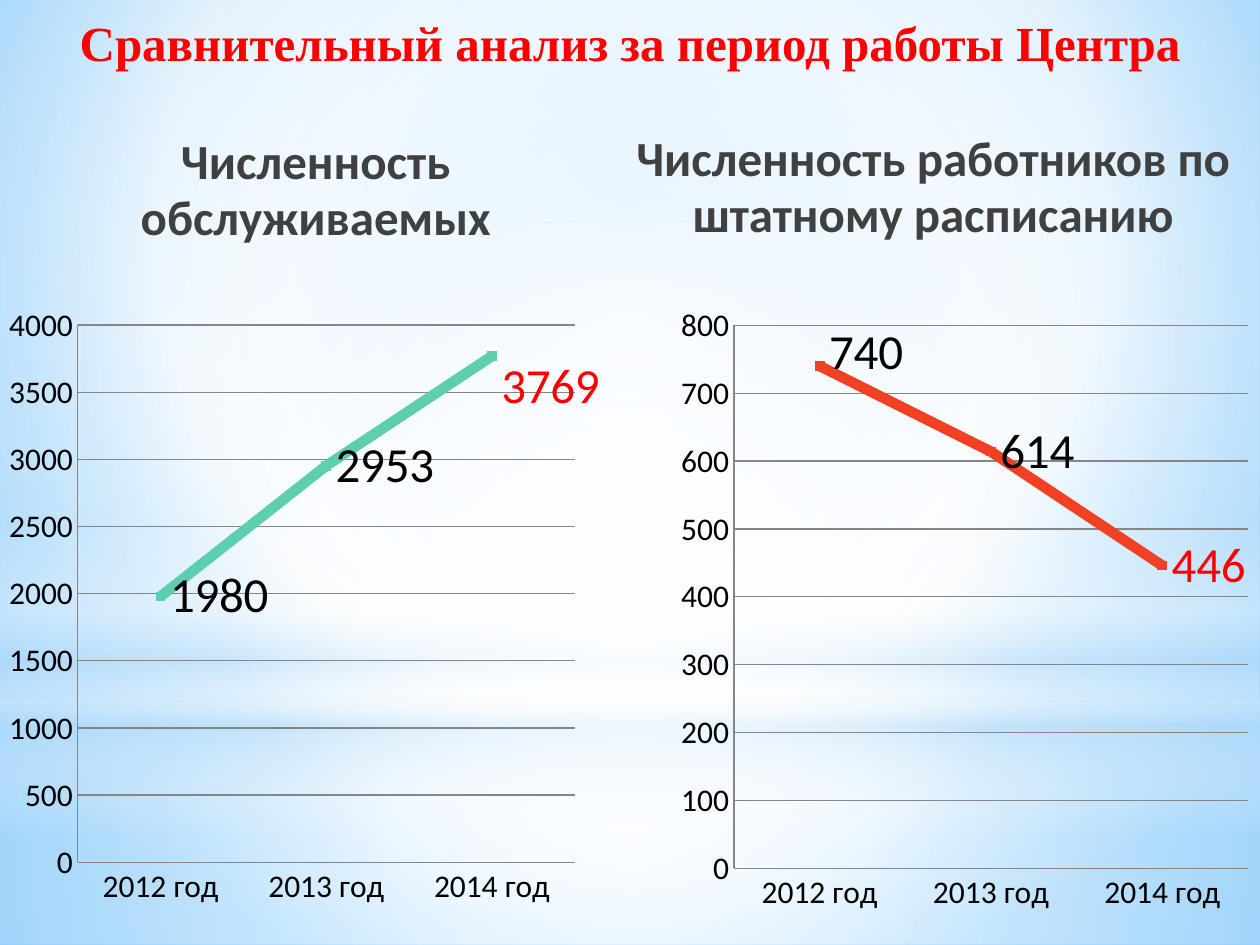
from dataclasses import dataclass
from lxml.etree import SubElement
from pptx import Presentation
from pptx.chart.data import CategoryChartData
from pptx.dml.color import RGBColor
from pptx.enum.chart import (XL_CHART_TYPE as ChartType, XL_LABEL_POSITION as LabelPos,
                             XL_MARKER_STYLE as Marker, XL_TICK_MARK as Tick)
from pptx.enum.shapes import MSO_SHAPE as Shape
from pptx.enum.text import MSO_ANCHOR as Anchor, PP_ALIGN as Align
from pptx.oxml import parse_xml
from pptx.oxml.ns import nsdecls, qn
from pptx.util import Inches, Pt

WIDTH, HEIGHT = 10, 7.5
COLORS = {"red": "FF0000", "heading": "404040", "black": "000000", "grid": "868686",
          "clients": "5DCEAF", "staff": "F14124", "white": "FFFFFF",
          "sky": "B4DCFA", "sky_mid": "9ED5FF", "sky_deep": "5BB9FF"}
YEARS = ["2012 год", "2013 год", "2014 год"]
CENTER = (50, 50, 50, 50)


def rgb(name):
    return RGBColor.from_string(COLORS[name])


def set_gradient(fill, parent, stops, focus=None):
    """Stops are (position, colour, opacity) in percent; without a focus the run is vertical."""
    fill.gradient()
    old = parent.find(qn("a:gradFill"))
    stop_xml = "".join(
        f'<a:gs pos="{pos * 1000}"><a:srgbClr val="{COLORS[color]}">'
        f'<a:alpha val="{opacity * 1000}"/></a:srgbClr></a:gs>'
        for pos, color, opacity in stops)
    if focus:
        sides = " ".join(f'{side}="{share * 1000}"' for side, share in zip("ltrb", focus))
        course = f'<a:path path="circle"><a:fillToRect {sides}/></a:path>'
    else:
        course = '<a:lin ang="5400000" scaled="0"/>'
    parent.replace(old, parse_xml(
        f'<a:gradFill {nsdecls("a")} rotWithShape="1"><a:gsLst>{stop_xml}</a:gsLst>'
        f'{course}</a:gradFill>'))


def add_layout(parent, index, **values):
    """Insert a manual chart layout as the child at index."""
    layout = SubElement(parent, qn("c:layout"))
    manual = SubElement(layout, qn("c:manualLayout"))
    for tag, value in values.items():
        SubElement(manual, qn(f"c:{tag}")).set("val", str(value))
    parent.insert(index, layout)


@dataclass
class SlideBuilder:
    slide: object
    body_font: str = "Calibri"
    title_font: str = "Times New Roman"
    heading_size: int = 28
    axis_size: int = 18

    def box(self, left, top, width, height):
        """Turn shares of the slide into lengths."""
        return (Inches(left * WIDTH), Inches(top * HEIGHT),
                Inches(width * WIDTH), Inches(height * HEIGHT))

    def background(self, stops, focus):
        fill = self.slide.background.fill
        fill.solid()
        bg_properties = self.slide.element.find(".//" + qn("p:bgPr"))
        set_gradient(fill, bg_properties, stops, focus)

    def glow(self, kind, area, stops, focus=None):
        glow = self.slide.shapes.add_shape(kind, *self.box(*area))
        glow.shadow.inherit = False
        glow.line.fill.background()
        set_gradient(glow.fill, glow.element.spPr, stops, focus)

    def text(self, words, area, color, font, anchor, top_margin=0.05):
        frame = self.slide.shapes.add_textbox(*self.box(*area)).text_frame
        frame.word_wrap = True
        frame.vertical_anchor = anchor
        frame.margin_top = Inches(top_margin)
        paragraph = frame.paragraphs[0]
        paragraph.text = words
        paragraph.alignment = Align.CENTER
        paragraph.font.name = font
        paragraph.font.size = Pt(self.heading_size)
        paragraph.font.bold = True
        paragraph.font.color.rgb = rgb(color)
        return paragraph

    def heading(self, words, area):
        paragraph = self.text(words, area, "heading", self.body_font, Anchor.BOTTOM)
        paragraph.space_after = Pt(3)
        paragraph.line_spacing = 0.96

    def label_font(self, font, color):
        font.name = self.body_font
        font.size = Pt(self.heading_size)
        font.color.rgb = rgb(color)

    def line_chart(self, area, values, color, top_value, step, plot, shifts):
        """Plot is (x, y, w, h) in shares of the chart; shifts move labels down by point."""
        data = CategoryChartData()
        data.categories = YEARS
        data.add_series("Series 1", values)
        chart = self.slide.shapes.add_chart(
            ChartType.LINE_MARKERS, *self.box(*area), data).chart
        chart.has_legend = chart.has_title = False
        chart.font.name = self.body_font
        chart.font.size = Pt(self.axis_size)
        chart.font.color.rgb = rgb("black")
        plot_area = chart.plots[0]
        plot_area.vary_by_categories = False

        for axis in (chart.category_axis, chart.value_axis):
            axis.major_tick_mark = axis.minor_tick_mark = Tick.NONE
            axis.format.line.color.rgb = rgb("grid")
            axis.format.line.width = Pt(0.75)
        value_axis = chart.value_axis
        value_axis.minimum_scale, value_axis.maximum_scale = 0, top_value
        value_axis.major_unit = step
        value_axis.has_major_gridlines = True
        value_axis.major_gridlines.format.line.color.rgb = rgb("grid")

        trend = plot_area.series[0]
        trend.smooth = False
        trend.format.line.color.rgb = rgb(color)
        trend.format.line.width = Pt(6)
        trend.marker.style, trend.marker.size = Marker.SQUARE, 5
        trend.marker.format.fill.solid()
        trend.marker.format.fill.fore_color.rgb = rgb(color)
        trend.marker.format.line.color.rgb = rgb(color)

        labels = trend.data_labels
        labels.show_value = True
        labels.position = LabelPos.RIGHT
        self.label_font(labels.font, "black")
        last = len(values) - 1
        for point in {last, *shifts}:
            label = trend.points[point].data_label
            self.label_font(label.font, "red" if point == last else "black")
            label.position = LabelPos.RIGHT
        for entry in labels._element.findall(qn("c:dLbl")):
            point = int(entry.find(qn("c:idx")).get("val"))
            if point in shifts:
                add_layout(entry, 1, x=0, y=shifts[point])

        frame = chart._chartSpace.find(".//" + qn("c:plotArea"))
        for layout in frame.findall(qn("c:layout")):
            frame.remove(layout)
        x, y, w, h = plot
        add_layout(frame, 0, layoutTarget="inner", xMode="edge", yMode="edge",
                   x=x, y=y, w=w, h=h)


def main():
    deck = Presentation()
    deck.slide_width, deck.slide_height = Inches(WIDTH), Inches(HEIGHT)
    page = SlideBuilder(deck.slides.add_slide(deck.slide_layouts[6]))

    page.background([(0, "sky_mid", 100), (60, "white", 100), (100, "sky_deep", 100)],
                    (20, 10, 20, 60))
    page.glow(Shape.RECTANGLE, (0, 0.744, 1, 0.256),
              [(0, "white", 91), (37, "white", 76), (100, "sky", 79)], CENTER)
    page.glow(Shape.RECTANGLE, (0, 0, 1, 0.744),
              [(0, "white", 89), (48, "white", 62), (100, "sky", 79)], CENTER)
    page.glow(Shape.RECTANGLE, (0, 0.55, 1, 0.333),
              [(0, "white", 0), (29, "white", 30), (45, "sky", 40),
               (55, "white", 26), (65, "sky", 60), (100, "white", 0)])
    page.glow(Shape.OVAL, (0, 0.233, 1, 0.744),
              [(0, "white", 100), (56, "white", 0)], CENTER)

    page.heading("Численность обслуживаемых", (0.02, 0.123, 0.461, 0.145))
    page.line_chart((0, 0.311, 0.476, 0.661), (1980, 2953, 3769), "clients", 4000, 500,
                    plot=(0.13, 0.05, 0.83, 0.86), shifts={2: 0.05})
    page.heading("Численность работников по штатному расписанию",
                 (0.485, 0.101, 0.511, 0.164))
    page.line_chart((0.531, 0.311, 0.469, 0.668), (740, 614, 446), "staff", 800, 100,
                    plot=(0.11, 0.05, 0.87, 0.86), shifts={0: -0.02})
    page.text("Сравнительный анализ за период работы Центра", (0, 0, 1, 0.101),
              "red", page.title_font, Anchor.TOP, top_margin=0.1)

    deck.save("out.pptx")


if __name__ == "__main__":
    main()
